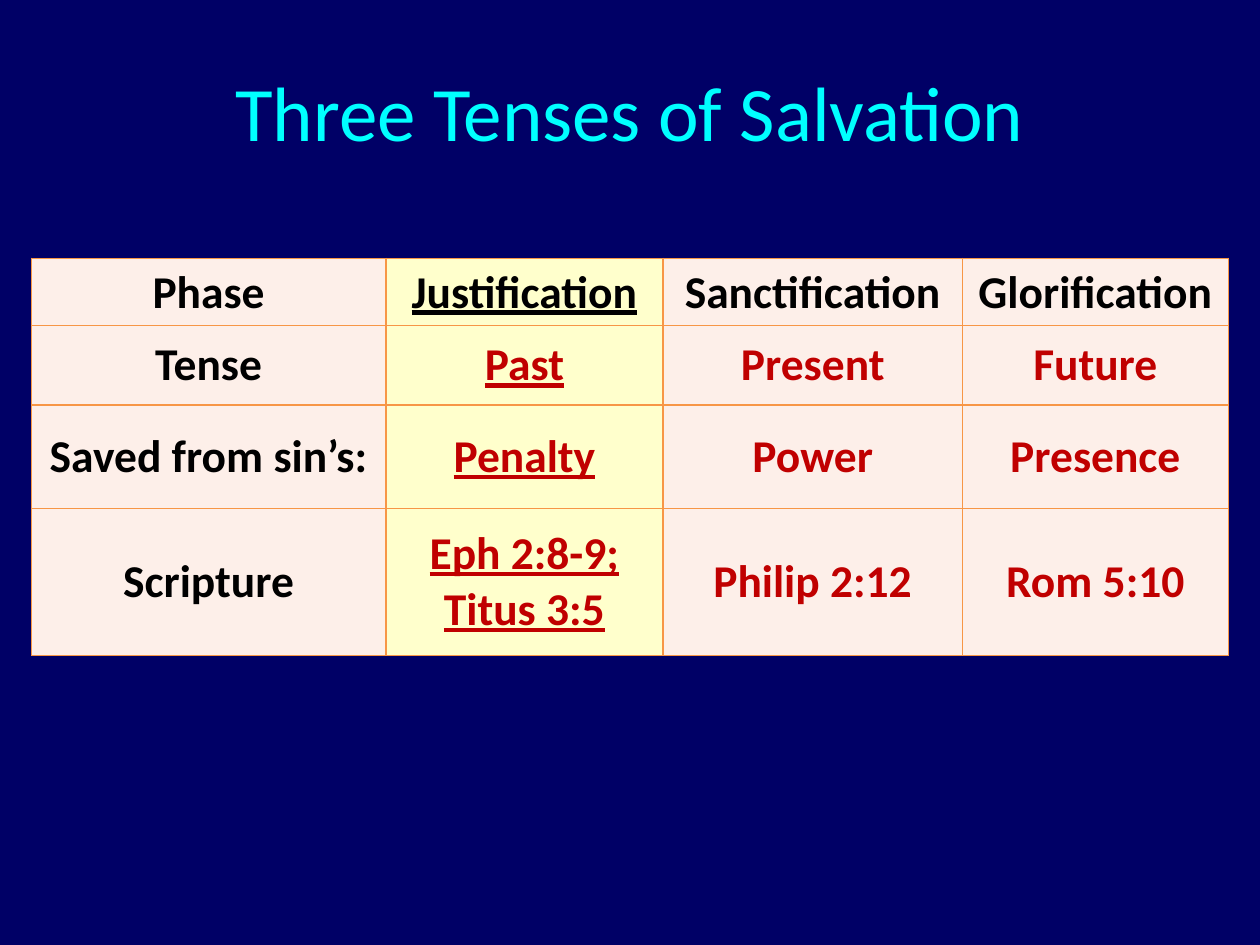
from lxml import etree
from pptx import Presentation
from pptx.dml.color import RGBColor
from pptx.enum.text import MSO_ANCHOR, PP_ALIGN
from pptx.oxml.ns import qn
from pptx.util import Pt

MIDDLE = MSO_ANCHOR.MIDDLE
CENTER = PP_ALIGN.CENTER

NAVY, CYAN, BLACK, RED = "000066", "00FFFF", "000000", "C00000"
PINK, YELLOW, ORANGE = "FDEFE9", "FFFFCC", "F79646"

ROWS = [
    ["Phase", "Justification", "Sanctification", "Glorification"],
    ["Tense", "Past", "Present", "Future"],
    ["Saved from sin’s:", "Penalty", "Power", "Presence"],
    ["Scripture", "Eph 2:8-9; Titus 3:5", "Philip 2:12", "Rom 5:10"],
]
COL_WIDTHS = [202.5, 158.5, 171, 152]
ROW_HEIGHTS = [36, 45.5, 59, 84]
HIGHLIGHT_COL = 1


def rgb(value):
    return RGBColor.from_string(value)


def write(tf, text, size, color, bold=False, underline=False):
    tf.word_wrap = True
    p = tf.paragraphs[0]
    p.alignment = CENTER
    r = p.add_run()
    r.text = text
    r.font.name = "Calibri"
    r.font.size = Pt(size)
    r.font.color.rgb = rgb(color)
    r.font.bold = bold
    r.font.underline = underline


def add_borders(cell, color, width):
    """Draw all four cell edges; call before the fill, which must follow them in the XML."""
    tc_pr = cell._tc.get_or_add_tcPr()
    for side in ("lnL", "lnR", "lnT", "lnB"):
        ln = etree.SubElement(tc_pr, qn(f"a:{side}"), w=str(Pt(width)))
        fill = etree.SubElement(ln, qn("a:solidFill"))
        etree.SubElement(fill, qn("a:srgbClr"), val=color)


def add_title(s, text, x, y, w, h):
    tf = s.shapes.add_textbox(Pt(x), Pt(y), Pt(w), Pt(h)).text_frame
    tf.vertical_anchor = MIDDLE
    write(tf, text, 44, CYAN)


def add_tenses_table(s, x, y, w, h):
    table = s.shapes.add_table(
        len(ROWS), len(COL_WIDTHS), Pt(x), Pt(y), Pt(w), Pt(h)).table
    for col, width in zip(table.columns, COL_WIDTHS):
        col.width = Pt(width)
    for row, height in zip(table.rows, ROW_HEIGHTS):
        row.height = Pt(height)
    for i, texts in enumerate(ROWS):
        for j, text in enumerate(texts):
            cell = table.cell(i, j)
            highlighted = j == HIGHLIGHT_COL
            add_borders(cell, ORANGE, 1)
            cell.fill.solid()
            cell.fill.fore_color.rgb = rgb(YELLOW if highlighted else PINK)
            cell.vertical_anchor = MIDDLE
            write(cell.text_frame, text, 26, RED if i and j else BLACK,
                  bold=True, underline=highlighted)


def main():
    prs = Presentation()
    prs.slide_width, prs.slide_height = Pt(720), Pt(540)
    s = prs.slides.add_slide(prs.slide_layouts[6])
    s.background.fill.solid()
    s.background.fill.fore_color.rgb = rgb(NAVY)
    add_title(s, "Three Tenses of Salvation", 54, 18, 612, 90)
    add_tenses_table(s, 18, 147.6, sum(COL_WIDTHS), sum(ROW_HEIGHTS))
    prs.save("out.pptx")


if __name__ == "__main__":
    main()
